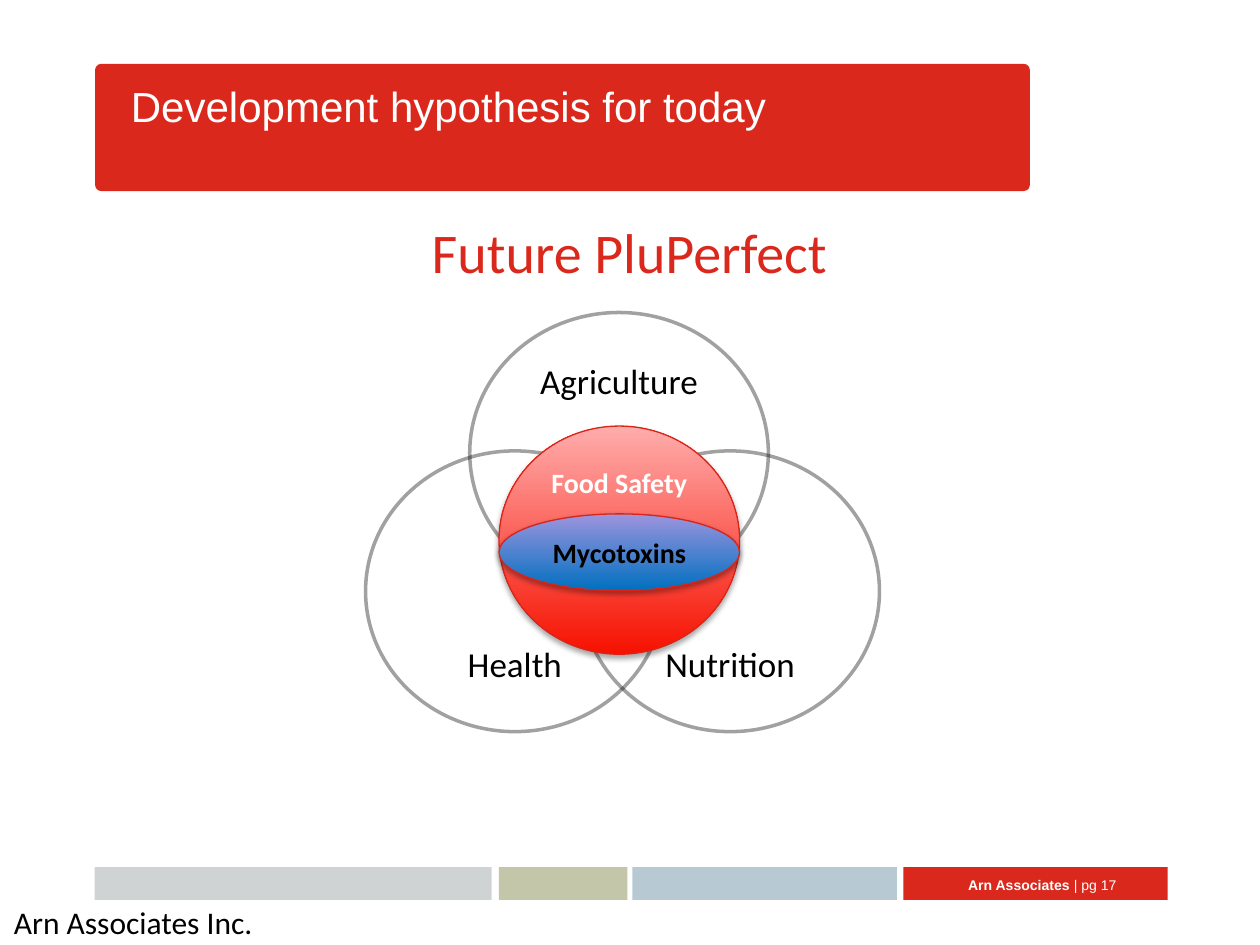
from dataclasses import dataclass

import lxml.etree
import pptx
import pptx.dml.color
import pptx.enum.shapes
import pptx.enum.text
import pptx.oxml.ns
import pptx.util

Cm = pptx.util.Cm
Pt = pptx.util.Pt
SHAPE = pptx.enum.shapes.MSO_SHAPE
ALIGN = pptx.enum.text.PP_ALIGN
ANCHOR = pptx.enum.text.MSO_ANCHOR
qn = pptx.oxml.ns.qn


@dataclass(frozen=True)
class Theme:
    red: str = "DA291C"
    edge: str = "DA2417"
    black: str = "000000"
    white: str = "FFFFFF"
    grey: str = "D0D3D4"
    olive: str = "C3C6A8"
    blue: str = "B7C9D3"
    safety: tuple = ("F61100", "FFADAC")
    toxins: tuple = ("0070C0", "9D94DE")
    heading_font: str = "Arial"
    body_font: str = "Calibri"
    title: int = 24
    subtitle: int = 32
    circle: int = 20
    note: int = 18
    core: int = 16
    footer: int = 8


def rgb(value):
    return pptx.dml.color.RGBColor.from_string(value)


class SlideBuilder:
    def __init__(self, prs, theme):
        self.theme = theme
        self.s = prs.slides.add_slide(prs.slide_layouts[6])

    def shape(self, kind, box):
        sp = self.s.shapes.add_shape(kind, *map(Cm, box))
        sp.shadow.inherit = False
        return sp

    def label(self, sp, runs, size, color, font=None, align=ALIGN.LEFT,
              anchor=ANCHOR.TOP):
        """Fill the shape with one paragraph of (text, bold) runs."""
        tf = sp.text_frame
        tf.word_wrap = True
        tf.vertical_anchor = anchor
        p = tf.paragraphs[0]
        p.alignment = align
        for text, bold in runs:
            r = p.add_run()
            r.text = text
            r.font.name = font or self.theme.body_font
            r.font.size = Pt(size)
            r.font.bold = bold
            r.font.color.rgb = rgb(color)

    def text(self, box, runs, size, color, **style):
        sp = self.s.shapes.add_textbox(*map(Cm, box))
        self.label(sp, runs, size, color, **style)

    def bar(self, box, color, radius=0, outlined=False):
        sp = self.shape(SHAPE.ROUNDED_RECTANGLE, box)
        sp.adjustments[0] = radius
        sp.fill.solid()
        sp.fill.fore_color.rgb = rgb(color)
        if outlined:
            sp.line.color.rgb = rgb(color)
            sp.line.width = Pt(0.75)
        else:
            sp.line.fill.background()

    def circle(self, left, top, name, anchor):
        """Draw a hollow Venn circle with a translucent outline."""
        sp = self.shape(SHAPE.OVAL, (left, top, 6.02, 5.66))
        sp.fill.background()
        sp.line.color.rgb = rgb(self.theme.black)
        sp.line.width = Pt(2)
        color = sp._element.spPr.find(qn("a:ln")).find(".//" + qn("a:srgbClr"))
        lxml.etree.SubElement(color, qn("a:alpha"), val="36000")
        self.label(sp, [(name, False)], self.theme.circle, self.theme.black,
                   align=ALIGN.CENTER, anchor=anchor)

    def core(self, top, height, name, color, gradient, anchor):
        """Draw a shaded central ellipse; the gradient runs upwards."""
        sp = self.shape(SHAPE.OVAL, (10.06, top, 4.85, height))
        sp.fill.gradient()
        sp.fill.gradient_angle = 90
        for stop, value in zip(sp.fill.gradient_stops, gradient):
            stop.color.rgb = rgb(value)
        sp.line.color.rgb = rgb(self.theme.edge)
        sp.line.width = Pt(0.75)
        self.drop_shadow(sp)
        self.label(sp, [(name, True)], self.theme.core, color,
                   align=ALIGN.CENTER, anchor=anchor)

    def drop_shadow(self, sp):
        effects = sp._element.spPr.find(qn("a:effectLst"))
        shadow = lxml.etree.SubElement(
            effects, qn("a:outerShdw"), blurRad=str(Pt(3.1)),
            dist=str(Pt(1.8)), dir="5400000", rotWithShape="0")
        color = lxml.etree.SubElement(shadow, qn("a:srgbClr"),
                                      val=self.theme.black)
        lxml.etree.SubElement(color, qn("a:alpha"), val="35000")


def main():
    prs = pptx.Presentation()
    prs.slide_width, prs.slide_height = Cm(25.4), Cm(19.05)
    t = Theme()
    b = SlideBuilder(prs, t)

    b.bar((1.93, 1.3, 18.82, 2.54), t.red, radius=0.045, outlined=True)
    for left, width, color in ((1.91, 8, t.grey), (10.06, 2.59, t.olive),
                               (12.75, 5.33, t.blue), (18.21, 5.33, t.red)):
        b.bar((left, 17.48, width, 0.66), color)
    b.text((16.84, 17.32, 5.92, 1.02),
           [("Arn Associates ", True), ("| pg 17", False)], t.footer, t.white,
           font=t.heading_font, align=ALIGN.RIGHT, anchor=ANCHOR.MIDDLE)
    b.text((0.03, 18.08, 13.82, 0.91), [("Arn Associates Inc.", False)],
           t.note, t.black)

    b.text((2.39, 1.5, 17.6, 1.27),
           [("Development hypothesis for today", False)], t.title, t.white,
           font=t.heading_font)
    b.text((8.23, 4.27, 8.92, 1.63), [("Future PluPerfect", False)],
           t.subtitle, t.red, align=ALIGN.CENTER)

    b.circle(9.47, 6.3, "Agriculture", ANCHOR.TOP)
    b.circle(11.71, 9.09, "Nutrition", ANCHOR.BOTTOM)
    b.circle(7.37, 9.09, "Health", ANCHOR.BOTTOM)
    b.core(8.59, 4.6, "Food Safety", t.white, t.safety, ANCHOR.TOP)
    b.core(10.36, 1.55, "Mycotoxins", t.black, t.toxins, ANCHOR.MIDDLE)

    prs.save("out.pptx")


if __name__ == "__main__":
    main()
